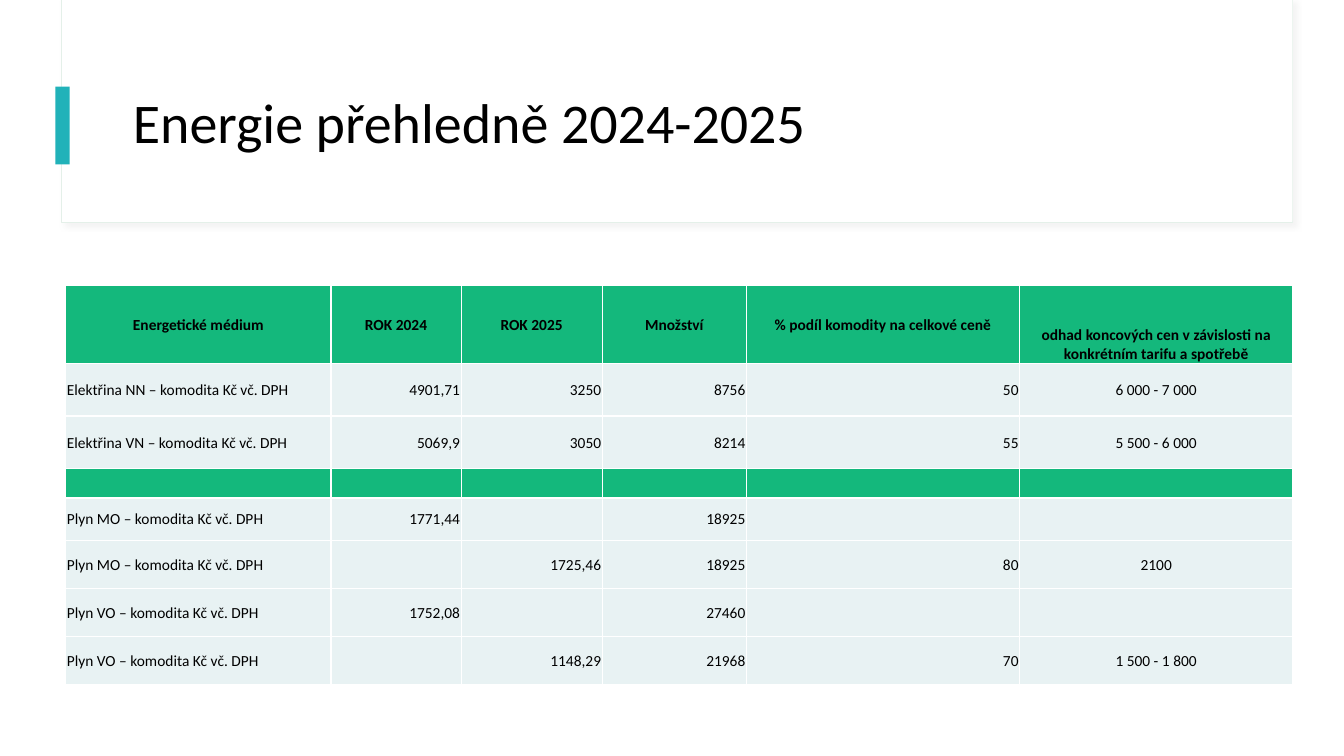
import pptx
import pptx.dml.color
import pptx.enum.shapes
import pptx.enum.text
import pptx.oxml
import pptx.oxml.ns
import pptx.util

WIDTH = pptx.util.Inches(13.33)
HEIGHT = pptx.util.Inches(7.5)
FONT = "Calibri"
COLORS = {
    "paper": "FFFFFF",
    "frame": "E4F0E9",
    "shadow": "D9D9D9",
    "accent": "21B2B9",
    "band": "14B87C",
    "row": "E8F2F3",
    "ink": "000000",
}
ALIGN = pptx.enum.text.PP_ALIGN
ANCHOR = pptx.enum.text.MSO_ANCHOR

# Column widths and row heights in percent of the slide.
COLUMNS = [19.73, 9.68, 10.5, 10.73, 20.33, 20.33]
ROWS = [10.27, 6.97, 6.97, 3.87, 5.6, 6.35, 6.35, 6.35]
COLUMN_ALIGN = [ALIGN.LEFT] + [ALIGN.RIGHT] * 4 + [ALIGN.CENTER]
HEADER_ROW, DIVIDER_ROW = 0, 3
PRICES = [
    ["Energetické médium", "ROK 2024", "ROK 2025", "Množství",
     "% podíl komodity na celkové ceně",
     "odhad koncových cen v závislosti na konkrétním tarifu a spotřebě"],
    ["Elektřina NN – komodita Kč vč. DPH", "4901,71", "3250", "8756", "50", "6 000 - 7 000"],
    ["Elektřina VN – komodita Kč vč. DPH", "5069,9", "3050", "8214", "55", "5 500 - 6 000"],
    [""] * 6,
    ["Plyn MO – komodita Kč vč. DPH", "1771,44", "", "18925", "", ""],
    ["Plyn MO – komodita Kč vč. DPH", "", "1725,46", "18925", "80", "2100"],
    ["Plyn VO – komodita Kč vč. DPH", "1752,08", "", "27460", "", ""],
    ["Plyn VO – komodita Kč vč. DPH", "", "1148,29", "21968", "70", "1 500 - 1 800"],
]


def rgb(name):
    return pptx.dml.color.RGBColor.from_string(COLORS[name])


def across(percent):
    return round(WIDTH * percent / 100)


def down(percent):
    return round(HEIGHT * percent / 100)


def place(x, y, w, h):
    """Turn percentages of the slide into left, top, width and height."""
    return across(x), down(y), across(w), down(h)


def add_box(s, box, fill, line=None):
    sp = s.shapes.add_shape(pptx.enum.shapes.MSO_SHAPE.RECTANGLE, *place(*box))
    sp.shadow.inherit = False
    sp.fill.solid()
    sp.fill.fore_color.rgb = rgb(fill)
    if line:
        sp.line.color.rgb = rgb(line)
        sp.line.width = pptx.util.Pt(0.75)
    else:
        sp.line.fill.background()
    return sp


def add_soft_shadow(sp):
    effects = sp.fill._xPr.find(pptx.oxml.ns.qn("a:effectLst"))
    effects.append(pptx.oxml.parse_xml(
        f'<a:outerShdw {pptx.oxml.ns.nsdecls("a")} blurRad="50800" dist="38100" '
        f'dir="2700000" algn="tl" rotWithShape="0"><a:srgbClr val="{COLORS["shadow"]}">'
        '<a:alpha val="30000"/></a:srgbClr></a:outerShdw>'))


def style_paragraph(p, size, bold=False):
    p.font.name = FONT
    p.font.size = pptx.util.Pt(size)
    p.font.bold = bold
    p.font.color.rgb = rgb("ink")


def add_title(s, text, box):
    tf = s.shapes.add_textbox(*place(*box)).text_frame
    tf.word_wrap = True
    tf.vertical_anchor = ANCHOR.MIDDLE
    p = tf.paragraphs[0]
    p.text = text
    p.line_spacing = 0.9
    style_paragraph(p, 40)


def add_borders(cell):
    """Draw a thin paper-coloured line on each side of the cell."""
    tc_pr = cell._tc.get_or_add_tcPr()
    for i, side in enumerate(("lnL", "lnR", "lnT", "lnB")):
        tc_pr.insert(i, pptx.oxml.parse_xml(
            f'<a:{side} {pptx.oxml.ns.nsdecls("a")} w="12700"><a:solidFill>'
            f'<a:srgbClr val="{COLORS["paper"]}"/></a:solidFill></a:{side}>'))


def fill_cell(cell, text, fill, align, bold):
    cell.fill.solid()
    cell.fill.fore_color.rgb = rgb(fill)
    cell.margin_left = cell.margin_right = cell.margin_top = pptx.util.Inches(0.01)
    cell.margin_bottom = 0
    cell.vertical_anchor = ANCHOR.MIDDLE
    p = cell.text_frame.paragraphs[0]
    p.text = text
    p.alignment = align
    style_paragraph(p, 11, bold)
    add_borders(cell)


def add_price_table(s, x, y):
    box = place(x, y, sum(COLUMNS), sum(ROWS))
    table = s.shapes.add_table(len(ROWS), len(COLUMNS), *box).table
    for column, width in zip(table.columns, COLUMNS):
        column.width = across(width)
    for row, height in zip(table.rows, ROWS):
        row.height = down(height)
    for i, texts in enumerate(PRICES):
        header = i == HEADER_ROW
        fill = "band" if i in (HEADER_ROW, DIVIDER_ROW) else "row"
        for j, text in enumerate(texts):
            align = ALIGN.CENTER if header else COLUMN_ALIGN[j]
            fill_cell(table.cell(i, j), text, fill, align, header)
    table.cell(HEADER_ROW, len(COLUMNS) - 1).vertical_anchor = ANCHOR.BOTTOM


def main():
    prs = pptx.Presentation()
    prs.slide_width, prs.slide_height = WIDTH, HEIGHT
    s = prs.slides.add_slide(prs.slide_layouts[6])
    frame = add_box(s, (4.6, 0, 91.6, 29.5), "paper", "frame")
    add_soft_shadow(frame)
    add_box(s, (4.65, 0, 91.52, 29.33), "paper")
    add_box(s, (4.13, 11.47, 1.05, 10.27), "accent")
    add_title(s, "Energie přehledně 2024-2025", (9.15, 8, 83.42, 17.2))
    add_price_table(s, 4.9, 37.8)
    prs.save("out.pptx")


if __name__ == "__main__":
    main()
